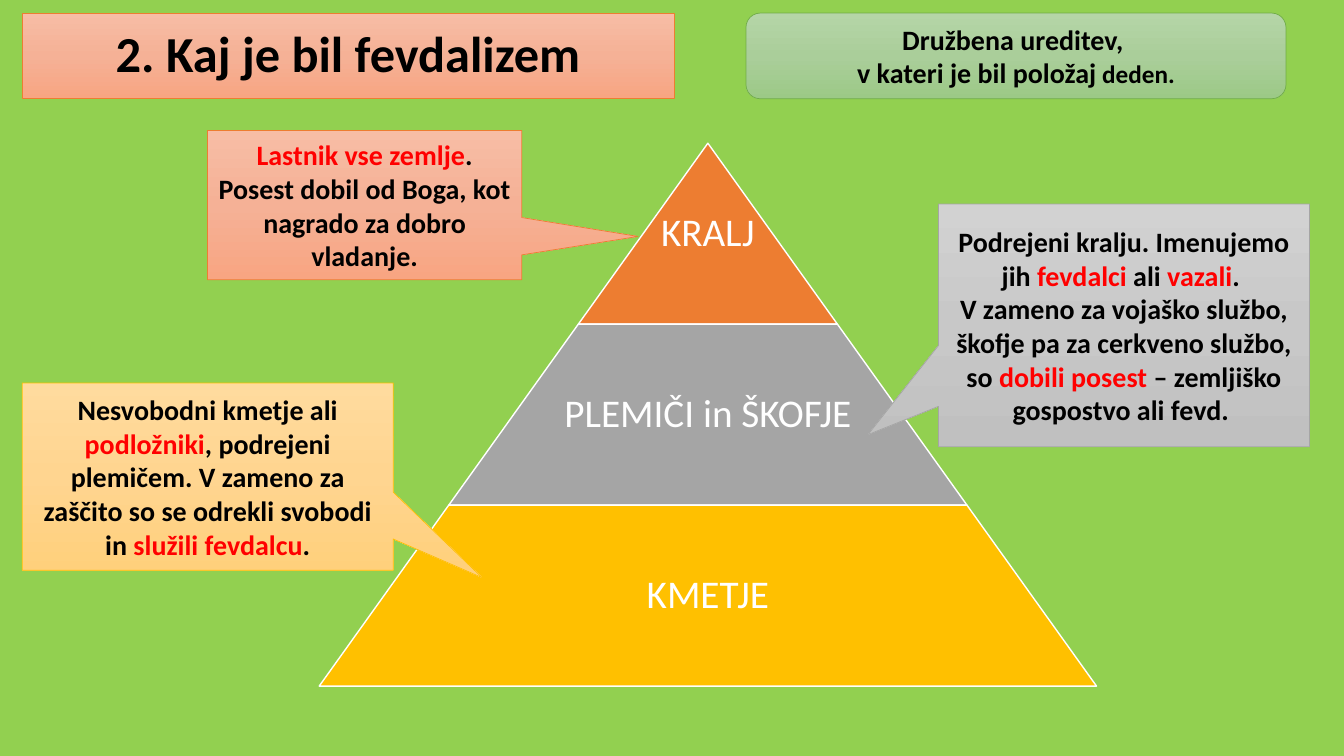
"""Build the slide on the feudal order."""
from copy import deepcopy

from pptx import Presentation
from pptx.dml.color import RGBColor
from pptx.enum.shapes import MSO_SHAPE
from pptx.enum.text import MSO_ANCHOR, MSO_AUTO_SIZE, PP_ALIGN
from pptx.util import Cm, Pt

BLACK = RGBColor(0x00, 0x00, 0x00)
WHITE = RGBColor(0xFF, 0xFF, 0xFF)
RED = RGBColor(0xFF, 0x00, 0x00)
LIME = RGBColor(0x92, 0xD0, 0x50)
ORANGE = RGBColor(0xED, 0x7D, 0x31)
GREY = RGBColor(0xA5, 0xA5, 0xA5)
GOLD = RGBColor(0xFF, 0xC0, 0x00)
GREEN = RGBColor(0x70, 0xAD, 0x47)
SHADES = {
    ORANGE: ("F7BDA5", "F5B196", "F8A582"),
    GREY: ("D2D2D2", "C8C8C8", "C0C0C0"),
    GOLD: ("FFDB9E", "FFD590", "FFD07C"),
    GREEN: ("B5D5A7", "AACE9A", "9CC987"),
}


class Board:
    """Hold the slide and the style of its elements."""

    font = "Calibri"

    def __init__(self, deck):
        """Add a title-only slide with a lime background."""
        self.slide = deck.slides.add_slide(deck.slide_layouts[5])
        fill = self.slide.background.fill
        fill.solid()
        fill.fore_color.rgb = LIME

    def shade(self, shape, tone):
        """Give a shape the three-step gradient and thin edge of a tone."""
        shape.fill.gradient()
        shape.fill.gradient_angle = 270
        first = shape.element.spPr.find(".//{*}gs")
        first.addnext(deepcopy(first))
        for i, (stop, code) in enumerate(zip(shape.fill.gradient_stops, SHADES[tone])):
            stop.position = i / 2
            stop.color.rgb = RGBColor.from_string(code)
        shape.line.color.rgb = tone
        shape.line.width = Pt(0.5)

    def label(self, shape, paras, size, color=BLACK, bold=True, space=1.0):
        """Fill a shape with centred paragraphs of (text, changes) runs."""
        frame = shape.text_frame
        frame.word_wrap = True
        frame.auto_size = MSO_AUTO_SIZE.NONE
        frame.vertical_anchor = MSO_ANCHOR.MIDDLE
        for i, runs in enumerate(paras):
            para = frame.add_paragraph() if i else frame.paragraphs[0]
            para.alignment = PP_ALIGN.CENTER
            para.line_spacing = space
            for text, *change in runs:
                run = para.add_run()
                run.text = text
                font = run.font
                font.name, font.size, font.bold = self.font, Pt(size), bold
                font.color.rgb = color
                for item in change:
                    if isinstance(item, RGBColor):
                        font.color.rgb = item
                    else:
                        font.size = item

    def title(self, box, text):
        """Place the title in a shaded bar."""
        shape = self.slide.shapes.title
        shape.left, shape.top, shape.width, shape.height = map(Cm, box)
        self.shade(shape, ORANGE)
        self.label(shape, [[(text,)]], 36, space=0.9)

    def panel(self, kind, box, tone, paras, tip=()):
        """Add a shaded panel, with its tip if it is a callout."""
        shape = self.slide.shapes.add_shape(kind, *map(Cm, box))
        shape.shadow.inherit = False
        for i, value in enumerate(tip):
            shape.adjustments[i] = value
        self.shade(shape, tone)
        self.label(shape, paras, 20)

    def pyramid(self, mid, top, step, high, tiers):
        """Stack labelled tiers, each one step wider than the last."""
        group = self.slide.shapes.add_group_shape().shapes
        for i, (text, tone, room) in enumerate(tiers):
            wide = step * (i + 1)
            y = Cm(top + high * i)
            tier = group.add_shape(
                MSO_SHAPE.TRAPEZOID, Cm(mid - wide / 2), y, Cm(wide), Cm(high))
            tier.shadow.inherit = False
            tier.adjustments[0] = step / 2 / high
            tier.fill.solid()
            tier.fill.fore_color.rgb = tone
            tier.line.color.rgb = WHITE
            tier.line.width = Pt(1)
            name = group.add_textbox(Cm(mid - room / 2), y, Cm(room), Cm(high))
            frame = name.text_frame
            frame.margin_left = frame.margin_right = Cm(0.1)
            frame.margin_top = frame.margin_bottom = Cm(0.1)
            self.label(name, [[(text,)]], 28, WHITE, False, 0.9)


def main():
    """Compose the slide and save it."""
    deck = Presentation()
    deck.slide_width, deck.slide_height = Cm(33.87), Cm(19.05)
    board = Board(deck)
    board.title((0.56, 0.33, 16.43, 2.16), "2. Kaj je bil fevdalizem")
    board.pyramid(17.84, 3.61, 6.53, 4.56, [
        ("KRALJ", ORANGE, 6.53),
        ("PLEMIČI in ŠKOFJE", GREY, 8.48),
        ("KMETJE", GOLD, 12.73),
    ])
    call = MSO_SHAPE.RECTANGULAR_CALLOUT
    board.panel(call, (5.23, 3.29, 7.92, 3.76), ORANGE, [
        [("Lastnik vse zemlje", RED),
         (". Posest dobil od Boga, kot nagrado za dobro vladanje.",)],
    ], (0.87, 0.21))
    board.panel(call, (23.65, 5.14, 9.35, 6.12), GREY, [
        [("Podrejeni kralju. Imenujemo jih ",), ("fevdalci", RED), (" ali ",),
         ("vazali", RED), (". ",)],
        [("V zameno za vojaško službo, škofje pa za cerkveno službo, so ",),
         ("dobili posest ", RED), ("– zemljiško gospostvo ali fevd. ",)],
    ], (-0.69, 0.45))
    board.panel(call, (0.56, 9.65, 9.35, 4.72), GOLD, [
        [("Nesvobodni kmetje ali ",), ("podložniki", RED),
         (", podrejeni plemičem. V zameno za zaščito so se odrekli svobodi in ",),
         ("služili fevdalcu", RED), (".",)],
    ], (0.74, 0.54))
    board.panel(MSO_SHAPE.ROUNDED_RECTANGLE, (18.8, 0.33, 13.61, 2.16), GREEN, [
        [("Družbena ureditev, ",)],
        [("v kateri je bil položaj",), (" deden.", Pt(18))],
    ])
    deck.save("out.pptx")


if __name__ == "__main__":
    main()
